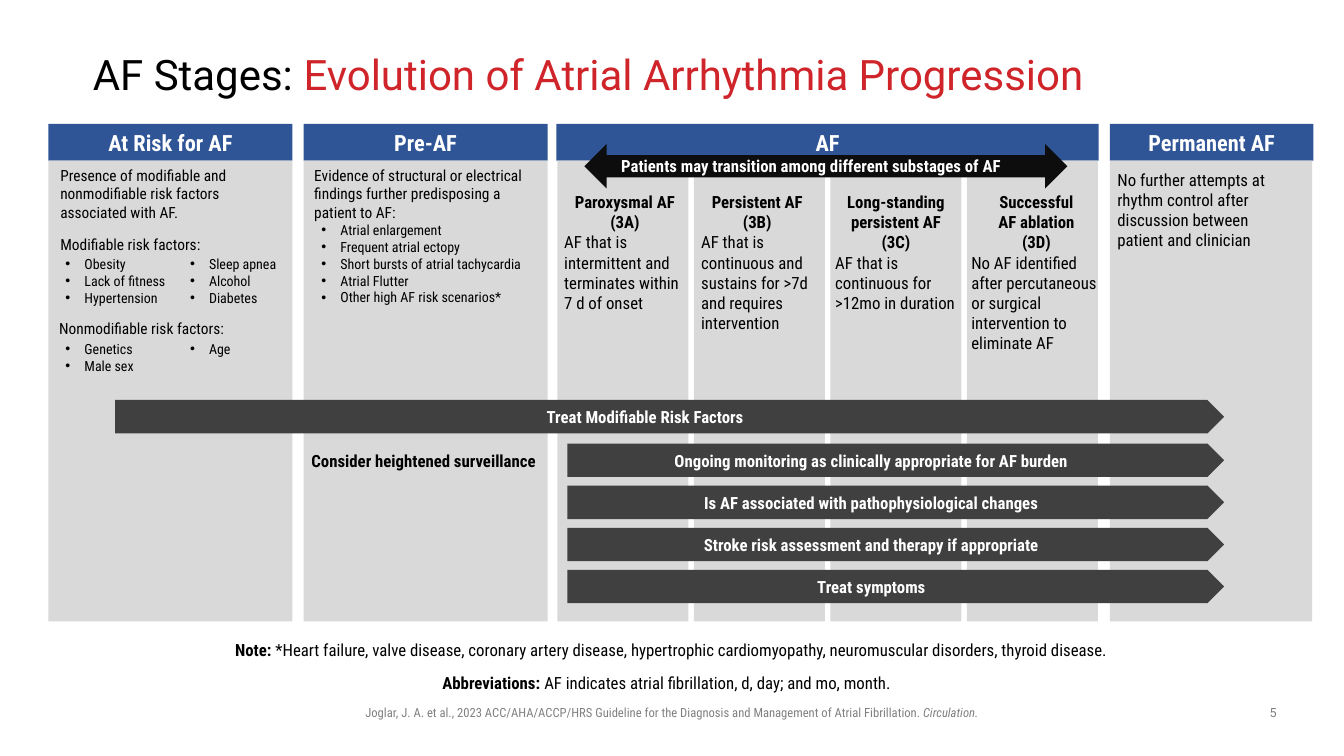
from dataclasses import dataclass

from lxml.etree import SubElement
from pptx import Presentation
from pptx.dml.color import RGBColor
from pptx.enum.shapes import MSO_SHAPE as Preset
from pptx.enum.text import MSO_ANCHOR as Anchor, MSO_AUTO_SIZE as AutoSize, PP_ALIGN as Align
from pptx.oxml.ns import qn
from pptx.util import Cm, Pt


@dataclass(frozen=True)
class Theme:
    heading_font: str = "Roboto"
    text_font: str = "Roboto Condensed"
    black: str = "000000"
    white: str = "FFFFFF"
    red: str = "CF2429"
    blue: str = "2F5597"
    panel: str = "D9D9D9"
    bar: str = "404040"
    arrow: str = "0D0D0D"
    grey: str = "808080"
    title: int = 30
    header: int = 16
    text: int = 12
    intro: int = 11
    item: int = 10
    footer: int = 9


theme = Theme()
deck = Presentation()
deck.slide_width, deck.slide_height = Cm(33.87), Cm(19.05)
page = deck.slides.add_slide(deck.slide_layouts[1])


def add_block(left, top, width, height, preset=None, fill=None):
    place = Cm(left), Cm(top), Cm(width), Cm(height)
    if preset is None:
        block = page.shapes.add_textbox(*place)
    else:
        block = page.shapes.add_shape(preset, *place)
        block.shadow.inherit = False
        block.fill.solid()
        block.fill.fore_color.rgb = RGBColor.from_string(fill)
        block.line.fill.background()
        block.text_frame.margin_top = block.text_frame.margin_bottom = 0
        block.text_frame.vertical_anchor = Anchor.MIDDLE
    block.text_frame.word_wrap = True
    return block.text_frame


def write(para, text, size=theme.text, color=theme.black, bold=False,
          align=Align.LEFT, bullet=False, font=theme.text_font):
    para.text = text
    para.alignment = align
    if bullet:
        properties = para._p.get_or_add_pPr()
        properties.set("marL", str(Cm(0.66)))
        properties.set("indent", str(Cm(-0.48)))
        SubElement(properties, qn("a:buFont")).set("typeface", "Arial")
        SubElement(properties, qn("a:buChar")).set("char", "•")
    para.font.name = font
    para.font.size = Pt(size)
    para.font.bold = bold
    para.font.color.rgb = RGBColor.from_string(color)
    return para


title, abbreviations = page.placeholders
for holder, place in (
    (title, (2.34, 1.02, 29.21, 1.83)),
    (abbreviations, (4.8, 16.89, 24.26, 0.61)),
):
    holder.left, holder.top, holder.width, holder.height = map(Cm, place)
    holder.text_frame.auto_size = AutoSize.NONE
    holder.text_frame.margin_left = 0

frame = title.text_frame
frame.margin_top = frame.margin_right = frame.margin_bottom = 0
frame.vertical_anchor = Anchor.MIDDLE
para = write(frame.paragraphs[0], "AF Stages: ", theme.title, font=theme.heading_font)
para.line_spacing = 0.9
span = para.add_run()
span.text = "Evolution of Atrial Arrhythmia Progression"
span.font.color.rgb = RGBColor.from_string(theme.red)

for text, left, width in (
    ("At Risk for AF", 1.22, 6.15),
    ("Pre-AF", 7.65, 6.15),
    ("AF", 14.02, 13.67),
    ("Permanent AF", 27.97, 5.13),
):
    header = add_block(left, 3.12, width, 0.93, Preset.RECTANGLE, theme.blue)
    write(header.paragraphs[0], text, theme.header, theme.white, True, Align.CENTER)

stage_panels = [(14.05 + 3.44 * column, 3.3) for column in range(4)]
for left, width in [(1.22, 6.15), (7.65, 6.15), *stage_panels, (27.97, 5.1)]:
    add_block(left, 4.05, width, 11.61, Preset.RECTANGLE, theme.panel)

at_risk = add_block(1.27, 4.06, 6.07, 2.95)
write(at_risk.paragraphs[0],
      "Presence of modifiable and nonmodifiable risk factors associated with AF.", theme.intro)
para = write(at_risk.add_paragraph(), "Modifiable risk factors:", theme.intro)
para.space_before = Pt(9.4)
nonmodifiable = add_block(1.24, 7.92, 6.02, 0.74)
write(nonmodifiable.paragraphs[0], "Nonmodifiable risk factors:", theme.intro)

for top, height, factors in (
    (6.32, 1.55, ("Obesity", "Lack of fitness", "Hypertension",
                  "Sleep apnea", "Alcohol", "Diabetes")),
    (8.46, 1.12, ("Genetics", "Male sex", "Age")),
):
    columns = add_block(1.22, top, 6.78, height)
    columns._txBody.bodyPr.set("numCol", "2")
    for index, factor in enumerate(factors):
        para = columns.add_paragraph() if index else columns.paragraphs[0]
        write(para, factor, theme.item, bullet=True)

pre_af = add_block(7.67, 4.06, 6.02, 3.81)
write(pre_af.paragraphs[0],
      "Evidence of structural or electrical findings further predisposing a patient to AF:",
      theme.intro)
for finding in ("Atrial enlargement", "Frequent atrial ectopy", "Short bursts of atrial tachycardia",
                "Atrial Flutter", "Other high AF risk scenarios*"):
    write(pre_af.add_paragraph(), finding, theme.item, bullet=True)

for left, width, name, meaning in (
    (13.97, 3.56, "Paroxysmal AF (3A)",
     "AF that is intermittent and terminates within 7 d of onset"),
    (17.42, 3.33, "Persistent AF (3B)",
     "AF that is continuous and sustains for >7d and requires intervention"),
    (20.8, 3.56, "Long-standing persistent AF (3C)",
     "AF that is continuous for >12mo in duration"),
    (24.23, 3.78, "Successful\nAF ablation\n(3D)",
     "No AF identified after percutaneous or surgical intervention to eliminate AF"),
):
    stage = add_block(left, 4.71, width, 3.8)
    write(stage.paragraphs[0], name, bold=True, align=Align.CENTER)
    write(stage.add_paragraph(), meaning)

permanent = add_block(27.91, 4.14, 5.05, 2.31)
write(permanent.paragraphs[0],
      "No further attempts at rhythm control after discussion between patient and clinician")

transition = add_block(14.73, 3.63, 12.17, 1.12, Preset.LEFT_RIGHT_ARROW, theme.arrow)
transition.margin_right = Cm(0.99)
write(transition.paragraphs[0], "Patients may transition among different substages of AF",
      color=theme.white, bold=True, align=Align.CENTER)

af_actions = (
    "Ongoing monitoring as clinically appropriate for AF burden",
    "Is AF associated with pathophysiological changes",
    "Stroke risk assessment and therapy if appropriate",
    "Treat symptoms",
)
bars = [(2.9, 10.08, "Treat Modifiable Risk Factors")]
bars += [(14.3, 11.18 + 1.06 * row, action) for row, action in enumerate(af_actions)]
for left, top, action in bars:
    bar = add_block(left, top, 30.85 - left, 0.84, Preset.PENTAGON, theme.bar)
    bar.margin_right = Cm(1.27)
    write(bar.paragraphs[0], action, color=theme.white, bold=True, align=Align.CENTER)

surveillance = add_block(7.29, 11.23, 6.78, 0.76)
write(surveillance.paragraphs[0], "Consider heightened surveillance", bold=True, align=Align.CENTER)

properties = abbreviations.text_frame.paragraphs[0]._p.get_or_add_pPr()
properties.set("marL", "0")
properties.set("indent", "0")
SubElement(properties, qn("a:buNone"))
abbreviations.text_frame.paragraphs[0].line_spacing = 0.9
abbreviations.text_frame.paragraphs[0].space_before = Pt(0)
note = add_block(5.38, 16, 23.09, 0.76)
for frame, label, text in (
    (note, "Note: ", "*Heart failure, valve disease, coronary artery disease, hypertrophic "
     "cardiomyopathy, neuromuscular disorders, thyroid disease."),
    (abbreviations.text_frame, "Abbreviations: ",
     "AF indicates atrial fibrillation, d, day; and mo, month."),
):
    para = write(frame.paragraphs[0], label, align=Align.CENTER)
    para.runs[0].font.bold = True
    para.add_run().text = text

citation = add_block(7.47, 17.65, 18.92, 0.64)
para = write(citation.paragraphs[0],
             "Joglar, J. A. et al., 2023 ACC/AHA/ACCP/HRS Guideline for the Diagnosis and "
             "Management of Atrial Fibrillation. ", theme.footer, theme.grey, align=Align.CENTER)
span = para.add_run()
span.text = "Circulation."
span.font.italic = True

page_number = add_block(31.55, 17.65, 1.07, 0.66)
write(page_number.paragraphs[0], "5", theme.footer, theme.grey, align=Align.CENTER,
      font=theme.heading_font)

deck.save("out.pptx")
